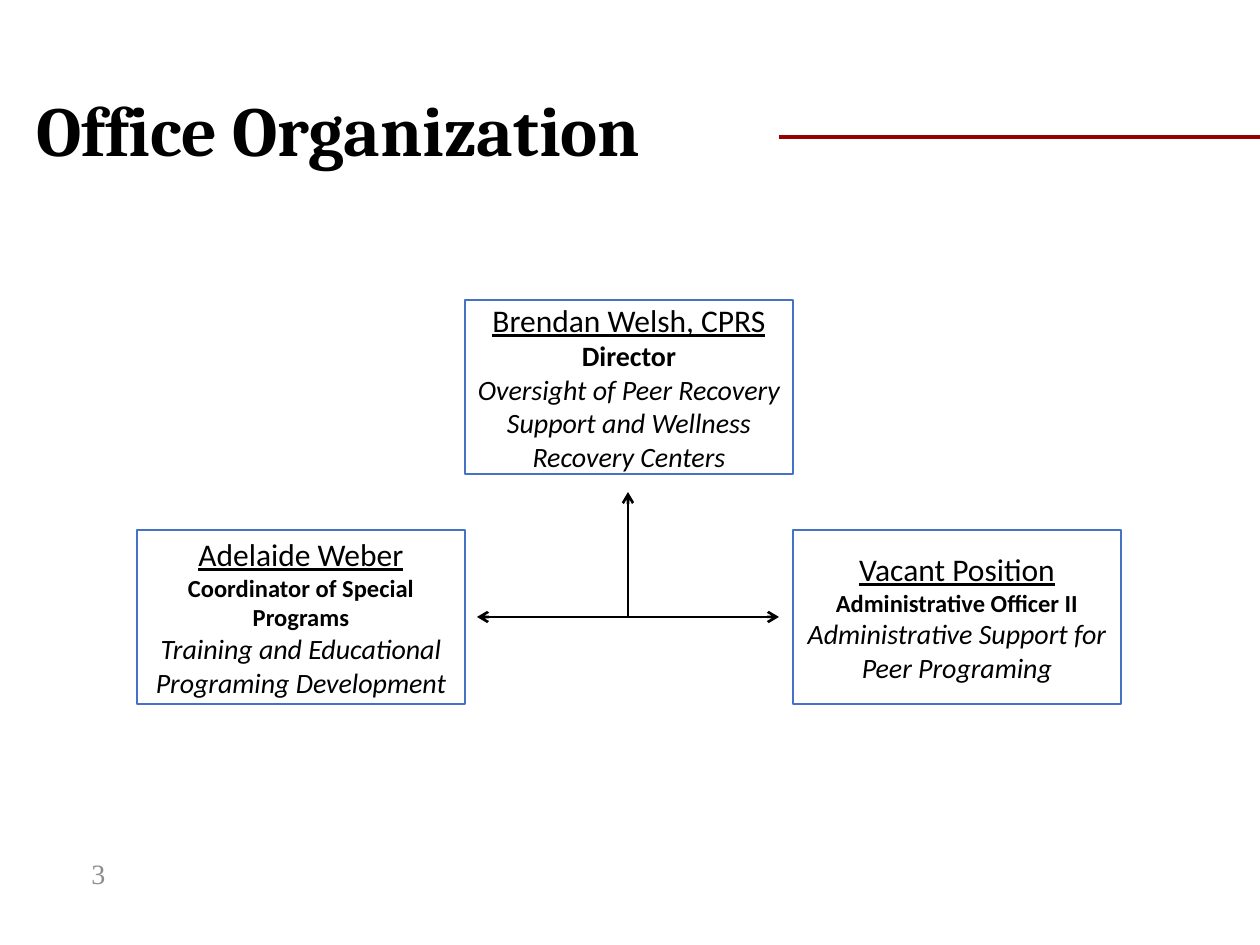
from lxml import etree
from pptx import Presentation
from pptx import util as u
from pptx.dml.color import RGBColor
from pptx.enum import shapes, text
from pptx.oxml.ns import qn

# Content
TITLE = "Office Organization"
PAGE = "3"
# column, row, name, role, role size, duties
STAFF = [
    (1, 0, "Brendan Welsh, CPRS", "Director", 16,
     "Oversight of Peer Recovery Support and Wellness Recovery Centers"),
    (0, 1, "Adelaide Weber", "Coordinator of Special Programs", 14,
     "Training and Educational Programing Development"),
    (2, 1, "Vacant Position", "Administrative Officer II", 14,
     "Administrative Support for Peer Programing"),
]

# Layout in px, 126 to the inch
BOX_W, BOX_H = 328, 174
LEFT, TOP, ROW_STEP = 137, 300, 230
CENTER_X, ARROW_Y = 628, 617
BLACK, BLUE, RED, GREY, WHITE = "000000", "4472C4", "980000", "8C8C8C", "FFFFFF"


def px(n):
    return u.Emu(n * 914400 // 126)


def rgb(value):
    return RGBColor.from_string(value)


def style(p, size, font, color, bold=False, italic=False, underline=False):
    for r in p.runs:
        f = r.font
        f.size, f.name, f.color.rgb = u.Pt(size), font, rgb(color)
        f.bold, f.italic, f.underline = bold, italic, underline


def add_line(x1, y1, x2, y2, color, width, ends=()):
    sp = slide.shapes.add_connector(
        shapes.MSO_CONNECTOR.STRAIGHT, px(x1), px(y1), px(x2), px(y2))
    sp.line.color.rgb, sp.line.width = rgb(color), u.Pt(width)
    ln = sp.line._get_or_add_ln()
    for end in ends:
        etree.SubElement(ln, qn("a:" + end), type="arrow")
    etree.SubElement(sp._element.spPr, qn("a:effectLst"))


def add_box(col, row, name, role, role_size, duties):
    sp = slide.shapes.add_shape(
        shapes.MSO_SHAPE.RECTANGLE, px(LEFT + col * BOX_W),
        px(TOP + row * ROW_STEP), px(BOX_W), px(BOX_H))
    sp.shadow.inherit = False
    sp.fill.solid()
    sp.fill.fore_color.rgb = rgb(WHITE)
    sp.line.color.rgb, sp.line.width = rgb(BLUE), u.Pt(1)
    tf = sp.text_frame
    tf.word_wrap = True
    tf.vertical_anchor = text.MSO_ANCHOR.MIDDLE
    tf.margin_left = tf.margin_right = px(10)
    tf.margin_top = tf.margin_bottom = 0
    tf.text = "\n".join([name, role, duties])
    for p in tf.paragraphs:
        p.alignment = text.PP_ALIGN.CENTER
    name_p, role_p, duties_p = tf.paragraphs
    style(name_p, 18, "Calibri", BLACK, underline=True)
    style(role_p, role_size, "Calibri", BLACK, bold=True)
    style(duties_p, 16, "Calibri", BLACK, italic=True)


prs = Presentation()
prs.slide_width, prs.slide_height = px(1260), px(945)
slide = prs.slides.add_slide(prs.slide_layouts[5])

# Title and rule
sp = slide.shapes.title
sp.left, sp.top, sp.width, sp.height = px(24), px(42), px(1086), px(183)
tf = sp.text_frame
tf.text = TITLE
tf.vertical_anchor = text.MSO_ANCHOR.MIDDLE
p = tf.paragraphs[0]
p.alignment, p.line_spacing = text.PP_ALIGN.LEFT, 0.9
style(p, 40, "Cambria", BLACK, bold=True)
add_line(779, 137, 1260, 137, RED, 2.25)

# Page number
tf = slide.shapes.add_textbox(px(79), px(848), px(69), px(50)).text_frame
tf.word_wrap = True
tf.vertical_anchor = text.MSO_ANCHOR.MIDDLE
tf.text = PAGE
style(tf.paragraphs[0], 16, "Times New Roman", GREY)

# Staff boxes and the arrows between them
for person in STAFF:
    add_box(*person)
add_line(CENTER_X - 151, ARROW_Y, CENTER_X + 151, ARROW_Y, BLACK, 1.5,
         ("headEnd", "tailEnd"))
add_line(CENTER_X, ARROW_Y, CENTER_X, 492, BLACK, 1.5, ("tailEnd",))

prs.save("out.pptx")
